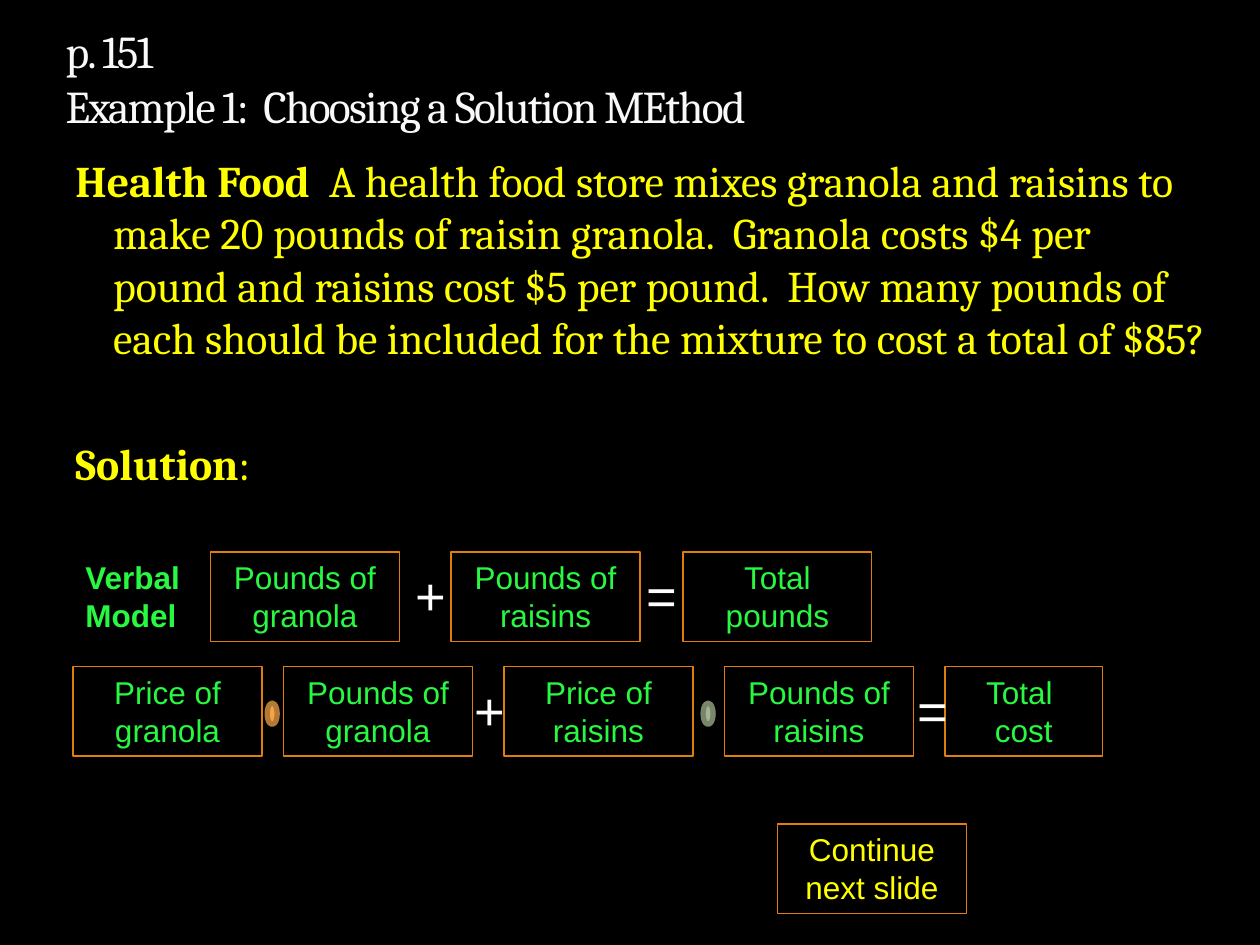
from pptx import Presentation
from pptx.dml.color import RGBColor
from pptx.enum.shapes import MSO_SHAPE
from pptx.enum.text import MSO_ANCHOR, MSO_AUTO_SIZE, PP_ALIGN
from pptx.util import Inches, Pt

COLORS = {
    "background": "000000",
    "title": "F9F9F9",
    "problem": "FFFF00",
    "model": "28F841",
    "operator": "FFFFFF",
    "border": "DD7E0E",
    "orange": "F3A447",
    "orange_edge": "B47935",
    "sage": "A5B592",
    "sage_edge": "7A866C",
}
BOX_WIDTH, BOX_HEIGHT = 1.5, 0.71
POUNDS_TOP, COST_TOP = 4.38, 5.29


def color(name):
    return RGBColor.from_string(COLORS[name])


def add_span(para, text, *, size=18, font="Arial", fill="model", bold=False):
    span = para.add_run()
    span.text = text
    span.font.size = Pt(size)
    span.font.name = font
    span.font.bold = bold
    span.font.color.rgb = color(fill)
    return span


def write_lines(frame, text, *, align=PP_ALIGN.CENTER, **style):
    frame.word_wrap = True
    frame.vertical_anchor = MSO_ANCHOR.TOP
    for index, line in enumerate(text.split("\n")):
        para = frame.add_paragraph() if index else frame.paragraphs[0]
        para.alignment = align
        add_span(para, line, **style)


def add_text(page, text, left, top, width, height, **style):
    box = page.shapes.add_textbox(Inches(left), Inches(top), Inches(width), Inches(height))
    write_lines(box.text_frame, text, **style)


def add_term(page, text, left, top, width=BOX_WIDTH, **style):
    box = page.shapes.add_shape(
        MSO_SHAPE.RECTANGLE, Inches(left), Inches(top), Inches(width), Inches(BOX_HEIGHT)
    )
    box.shadow.inherit = False
    box.fill.background()
    box.line.color.rgb = color("border")
    box.line.width = Pt(0.75)
    write_lines(box.text_frame, text, **style)


def add_times_dot(page, left, fill, edge):
    dot = page.shapes.add_shape(
        MSO_SHAPE.OVAL, Inches(left), Inches(5.58), Inches(0.08), Inches(0.17)
    )
    dot.shadow.inherit = False
    dot.fill.solid()
    dot.fill.fore_color.rgb = color(fill)
    dot.line.color.rgb = color(edge)
    dot.line.width = Pt(3)


def set_title(page, text):
    title = page.shapes.title
    title.left, title.top = Inches(0.42), Inches(0.17)
    title.width, title.height = Inches(7.92), Inches(0.93)
    frame = title.text_frame
    frame.auto_size = MSO_AUTO_SIZE.NONE
    frame.vertical_anchor = MSO_ANCHOR.BOTTOM
    para = frame.paragraphs[0]
    para.alignment = PP_ALIGN.LEFT
    for index, line in enumerate(text.split("\n")):
        if index:
            para.add_line_break()
        span = add_span(para, line, size=26, font="Cambria", fill="title")
        span.font._element.set("spc", "-100")


def add_problem(page, paragraphs):
    box = page.shapes.add_textbox(Inches(0.5), Inches(1.17), Inches(9.17), Inches(5.25))
    frame = box.text_frame
    frame.word_wrap = True
    for index, (heading, text, space) in enumerate(paragraphs):
        para = frame.add_paragraph() if index else frame.paragraphs[0]
        para.space_before = Pt(space)
        properties = para._p.get_or_add_pPr()
        properties.set("marL", str(Inches(0.3)))
        properties.set("indent", str(Inches(-0.3)))
        for words, bold in ((heading, True), (text, False)):
            add_span(para, words, size=25, font="Cambria", fill="problem", bold=bold)


def main():
    deck = Presentation()
    deck.slide_width, deck.slide_height = Inches(10), Inches(7.5)
    page = deck.slides.add_slide(deck.slide_layouts[5])
    page.background.fill.solid()
    page.background.fill.fore_color.rgb = color("background")

    set_title(page, "p. 151\nExample 1:  Choosing a Solution MEthod")
    add_problem(page, [
        ("Health Food",
         "  A health food store mixes granola and raisins to make 20 pounds of raisin granola."
         "  Granola costs $4 per pound and raisins cost $5 per pound."
         "  How many pounds of each should be included for the mixture to cost a total of $85?",
         6),
        ("Solution", ":", 42),
    ])

    add_text(page, "Verbal\nModel", 0.58, POUNDS_TOP, 1.08, BOX_HEIGHT,
             align=PP_ALIGN.LEFT, bold=True)
    for text, left in (("Pounds of granola", 1.67), ("Pounds of raisins", 3.58),
                       ("Total pounds", 5.42)):
        add_term(page, text, left, POUNDS_TOP)

    cost_terms = ("Price of granola", "Pounds of granola", "Price of raisins", "Pounds of raisins")
    for index, text in enumerate(cost_terms):
        add_term(page, text, (0.58, 2.25, 4, 5.75)[index], COST_TOP)
    add_term(page, "Total \ncost", 7.5, COST_TOP, width=1.25)

    for sign, left, row in (("+", 2.67, POUNDS_TOP), ("+", 3.14, COST_TOP),
                            ("=", 4.5, POUNDS_TOP), ("=", 6.65, COST_TOP)):
        add_text(page, sign, left, row + 0.04, 1.5, 0.61, size=30, fill="operator")

    add_times_dot(page, 2.12, "orange", "orange_edge")
    add_times_dot(page, 5.58, "sage", "sage_edge")
    add_term(page, "Continue next slide", 6.17, 6.54, fill="problem")

    deck.save("out.pptx")


if __name__ == "__main__":
    main()
